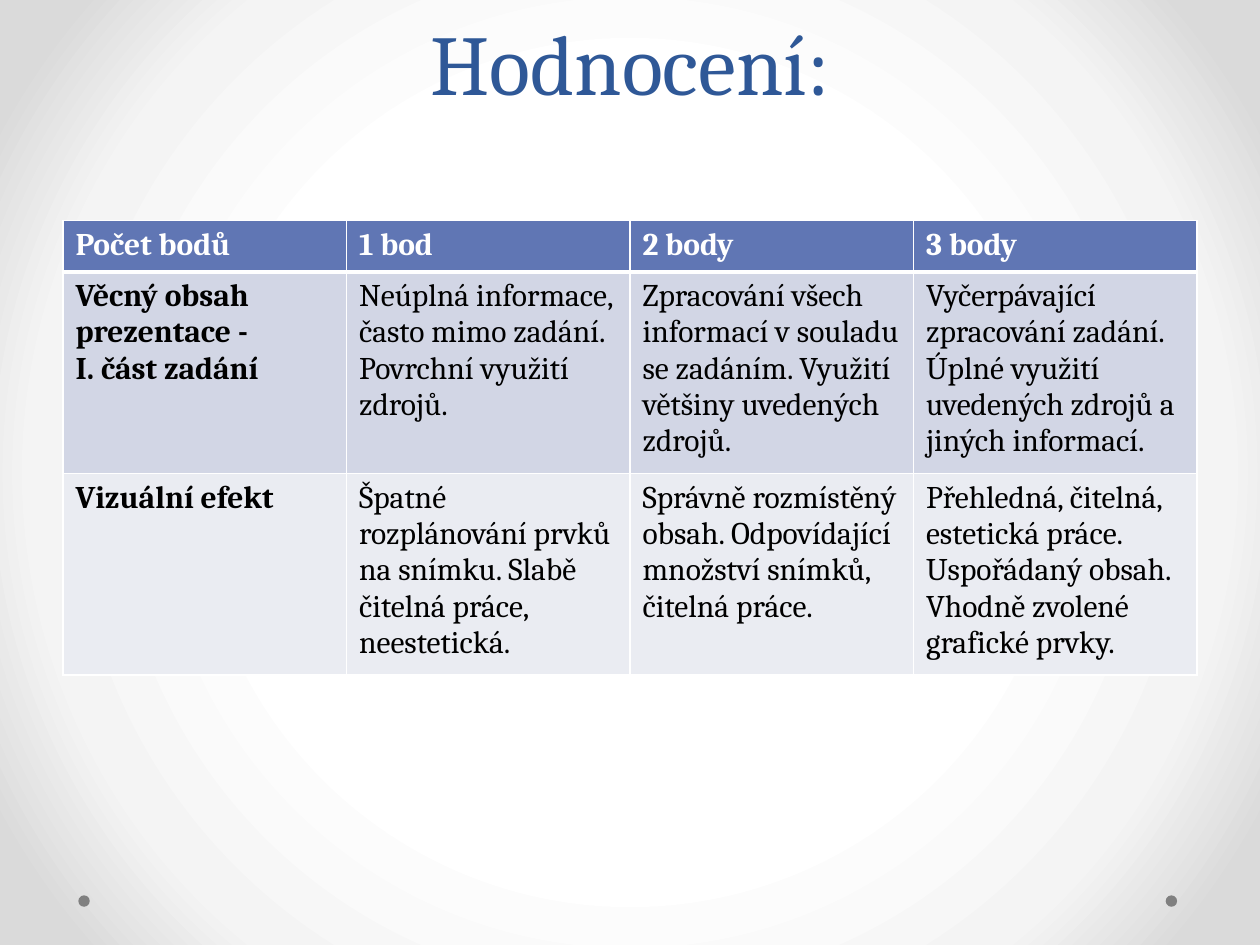
from pptx import Presentation
from pptx.dml.color import RGBColor
from pptx.enum.shapes import MSO_SHAPE
from pptx.enum.text import MSO_ANCHOR, PP_ALIGN
from pptx.oxml import parse_xml
from pptx.oxml.ns import nsdecls
from pptx.util import Cm, Pt

OVAL = MSO_SHAPE.OVAL
BOTTOM = MSO_ANCHOR.BOTTOM
CENTER = PP_ALIGN.CENTER

COLORS = {
    "title": "2F5897", "head": "6076B4", "odd": "D2D6E5", "even": "EAECF2",
    "white": "FFFFFF", "black": "000000", "dot": "808080",
    "pale": "F4F4F4", "edge": "DADADA",
}
ROWS = [
    ["Počet bodů", "1 bod", "2 body", "3 body"],
    ["Věcný obsah prezentace -\nI. část zadání",
     "Neúplná informace, často mimo zadání. Povrchní využití zdrojů.",
     "Zpracování všech informací v souladu se zadáním. Využití většiny uvedených zdrojů.",
     "Vyčerpávající zpracování zadání. Úplné využití uvedených zdrojů a jiných informací."],
    ["Vizuální efekt",
     "Špatné rozplánování prvků na snímku. Slabě čitelná práce, neestetická.",
     "Správně rozmístěný obsah. Odpovídající množství snímků, čitelná práce.",
     "Přehledná, čitelná, estetická práce. Uspořádaný obsah. Vhodně zvolené grafické prvky."],
]


class Deck:
    """Holds the style and the current slide."""

    def __init__(self, slide, font):
        self.slide = slide
        self.font = font

    def paint(self, fill, color):
        fill.solid()
        fill.fore_color.rgb = RGBColor.from_string(COLORS[color])

    def style(self, frame, color, **form):
        for para in frame.paragraphs:
            for run in para.runs:
                for key, value in {"name": self.font, **form}.items():
                    setattr(run.font, key, value)
                run.font.color.rgb = RGBColor.from_string(COLORS[color])

    def back(self, stops):
        marks = "".join(
            f'<a:gs pos="{pos * 1000}"><a:srgbClr val="{COLORS[color]}"/></a:gs>'
            for pos, color in stops)
        self.slide.element.cSld.insert(0, parse_xml(
            f'<p:bg {nsdecls("p", "a")}><p:bgPr><a:gradFill rotWithShape="1">'
            f'<a:gsLst>{marks}</a:gsLst><a:path path="circle">'
            '<a:fillToRect l="50000" t="50000" r="50000" b="50000"/></a:path>'
            '</a:gradFill><a:effectLst/></p:bgPr></p:bg>'))

    def dot(self, left, top, size):
        shape = self.slide.shapes.add_shape(OVAL, Cm(left), Cm(top), Cm(size), Cm(size))
        shape.shadow.inherit = False
        self.paint(shape.fill, "dot")
        shape.line.fill.background()

    def title(self, text, box):
        frame = self.slide.shapes.add_textbox(*map(Cm, box)).text_frame
        form = {"word_wrap": True, "vertical_anchor": BOTTOM,
                "margin_bottom": Cm(2.18), "text": text}
        for key, value in form.items():
            setattr(frame, key, value)
        para = frame.paragraphs[0]
        para.alignment = CENTER
        para.line_spacing = Pt(58)
        self.style(frame, "title", size=Pt(48.6))

    def edges(self, cell, top, bottom):
        props = cell._tc.get_or_add_tcPr()
        widths = {"L": 1, "R": 1, "T": top, "B": bottom}
        for spot, (side, width) in enumerate(widths.items()):
            props.insert(spot, parse_xml(
                f'<a:ln{side} {nsdecls("a")} w="{Pt(width)}"><a:solidFill>'
                f'<a:srgbClr val="{COLORS["white"]}"/></a:solidFill></a:ln{side}>'))

    def table(self, rows, box, tall):
        grid = self.slide.shapes.add_table(len(rows), len(rows[0]), *map(Cm, box)).table
        for row, texts in enumerate(rows):
            grid.rows[row].height = Cm(tall[row])
            for col, text in enumerate(texts):
                cell = grid.cell(row, col)
                cell.text = text
                self.paint(cell.fill, ("head", "odd", "even")[row])
                self.edges(cell, 3 if row == 1 else 1, 3 if row == 0 else 1)
                self.style(cell.text_frame, "black" if row else "white",
                           size=Pt(18), bold=row == 0 or col == 0)


def main():
    show = Presentation()
    show.slide_width, show.slide_height = Cm(25.4), Cm(19.05)
    deck = Deck(show.slides.add_slide(show.slide_layouts[6]), "Cambria")
    deck.back([(50, "white"), (76, "pale"), (92, "edge")])
    for left in (23.5, 1.58):
        deck.dot(left, 18.05, 0.23)
    deck.title("Hodnocení:", (1.27, 0, 22.86, 4.45))
    tall = (1.03, 3.91, 3.91)
    deck.table(ROWS, (1.27, 4.45, 22.86, sum(tall)), tall)
    show.save("out.pptx")


if __name__ == "__main__":
    main()
